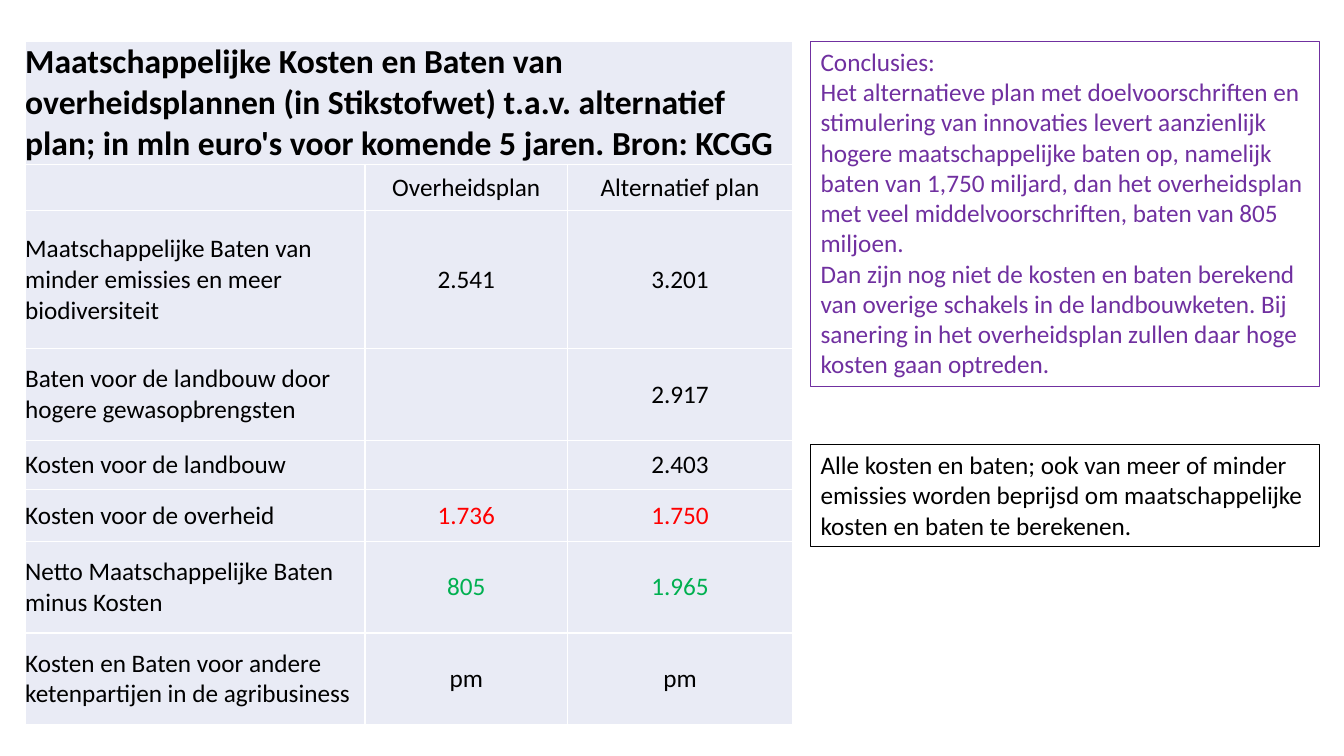
import pptx
import pptx.dml.color
import pptx.enum.text
import pptx.oxml
import pptx.oxml.ns
import pptx.util

RGB = pptx.dml.color.RGBColor
BLACK = RGB(0x00, 0x00, 0x00)
RED = RGB(0xFF, 0x00, 0x00)
GREEN = RGB(0x00, 0xB0, 0x50)
PURPLE = RGB(0x70, 0x30, 0xA0)
LAVENDER = RGB(0xE9, 0xEB, 0xF5)
BORDER_HEX = "FFFFFF"
ALIGN = pptx.enum.text.PP_ALIGN
ANCHOR = pptx.enum.text.MSO_ANCHOR

TITLE = ("Maatschappelijke Kosten en Baten van overheidsplannen (in Stikstofwet) "
         "t.a.v. alternatief plan; in mln euro's voor komende 5 jaren. Bron: KCGG")
TITLE_HEIGHT = 112
COLUMN_WIDTHS = [337, 201, 223]
COST_ROWS = [
    (46, BLACK, ["", "Overheidsplan", "Alternatief plan"]),
    (137, BLACK, ["Maatschappelijke Baten van minder emissies en meer biodiversiteit",
                  "2.541", "3.201"]),
    (91, BLACK, ["Baten voor de landbouw door hogere gewasopbrengsten", "", "2.917"]),
    (49, BLACK, ["Kosten voor de landbouw", "", "2.403"]),
    (51, RED, ["Kosten voor de overheid", "1.736", "1.750"]),
    (91, GREEN, ["Netto Maatschappelijke Baten minus Kosten", "805", "1.965"]),
    (91, BLACK, ["Kosten en Baten voor andere ketenpartijen in de agribusiness", "pm", "pm"]),
]
NOTES = [
    (41, 343, PURPLE, [
        "Conclusies:",
        "Het alternatieve plan met doelvoorschriften en stimulering van innovaties levert "
        "aanzienlijk hogere maatschappelijke baten op, namelijk baten van 1,750 miljard, dan "
        "het overheidsplan met veel middelvoorschriften, baten van 805 miljoen.",
        "Dan zijn nog niet de kosten en baten berekend van overige schakels in de "
        "landbouwketen. Bij sanering in het overheidsplan zullen daar hoge kosten gaan optreden.",
    ]),
    (441, 101, BLACK, [
        "Alle kosten en baten; ook van meer of minder emissies worden beprijsd om "
        "maatschappelijke kosten en baten te berekenen.",
    ]),
]
TABLE_LEFT, TABLE_TOP = 25, 41
NOTE_LEFT, NOTE_WIDTH = 804, 505


def px(length):
    return pptx.util.Emu(length * 9144)


def write(frame, paragraphs, size=18, color=BLACK, bold=False, align=ALIGN.LEFT):
    frame.word_wrap = True
    for index, text in enumerate(paragraphs):
        paragraph = frame.add_paragraph() if index else frame.paragraphs[0]
        paragraph.alignment = align
        paragraph.font.size = pptx.util.Pt(size)
        if text:
            run = paragraph.add_run()
            run.text = text
            run.font.name = "Calibri"
            run.font.size = pptx.util.Pt(size)
            run.font.bold = bold
            run.font.color.rgb = color


def style_cell(cell, anchor=ANCHOR.MIDDLE):
    cell.margin_left = cell.margin_right = cell.margin_top = cell.margin_bottom = 0
    cell.vertical_anchor = anchor
    cell.fill.solid()
    cell.fill.fore_color.rgb = LAVENDER
    properties = cell._tc.get_or_add_tcPr()
    for position, side in enumerate(("lnL", "lnR", "lnT", "lnB")):
        properties.insert(position, pptx.oxml.parse_xml(
            f'<a:{side} {pptx.oxml.ns.nsdecls("a")} w="12700"><a:solidFill>'
            f'<a:srgbClr val="{BORDER_HEX}"/></a:solidFill></a:{side}>'))


def add_cost_table(slide):
    heights = [TITLE_HEIGHT] + [height for height, _, _ in COST_ROWS]
    costs = slide.shapes.add_table(
        len(heights), len(COLUMN_WIDTHS), px(TABLE_LEFT), px(TABLE_TOP),
        px(sum(COLUMN_WIDTHS)), px(sum(heights))).table
    costs.first_row = costs.horz_banding = False
    for column, width in zip(costs.columns, COLUMN_WIDTHS):
        column.width = px(width)
    for row, height in zip(costs.rows, heights):
        row.height = px(height)

    for column in range(len(COLUMN_WIDTHS)):
        style_cell(costs.cell(0, column), anchor=ANCHOR.TOP)
    heading = costs.cell(0, 0)
    heading.merge(costs.cell(0, len(COLUMN_WIDTHS) - 1))
    write(heading.text_frame, [TITLE], size=24, bold=True)

    for row, (_, value_color, texts) in enumerate(COST_ROWS, start=1):
        for column, text in enumerate(texts):
            cell = costs.cell(row, column)
            style_cell(cell)
            write(cell.text_frame, [text], color=value_color if column else BLACK,
                  align=ALIGN.CENTER if column else ALIGN.LEFT)


def add_note(slide, top, height, color, paragraphs):
    note = slide.shapes.add_textbox(px(NOTE_LEFT), px(top), px(NOTE_WIDTH), px(height))
    note.line.color.rgb = color
    note.line.width = pptx.util.Pt(0.75)
    write(note.text_frame, paragraphs, color=color)
    note.text_frame.auto_size = pptx.enum.text.MSO_AUTO_SIZE.SHAPE_TO_FIT_TEXT


def main():
    deck = pptx.Presentation()
    deck.slide_width, deck.slide_height = px(1333), px(750)
    slide = deck.slides.add_slide(deck.slide_layouts[6])
    add_cost_table(slide)
    for note in NOTES:
        add_note(slide, *note)
    deck.save("out.pptx")


if __name__ == "__main__":
    main()
